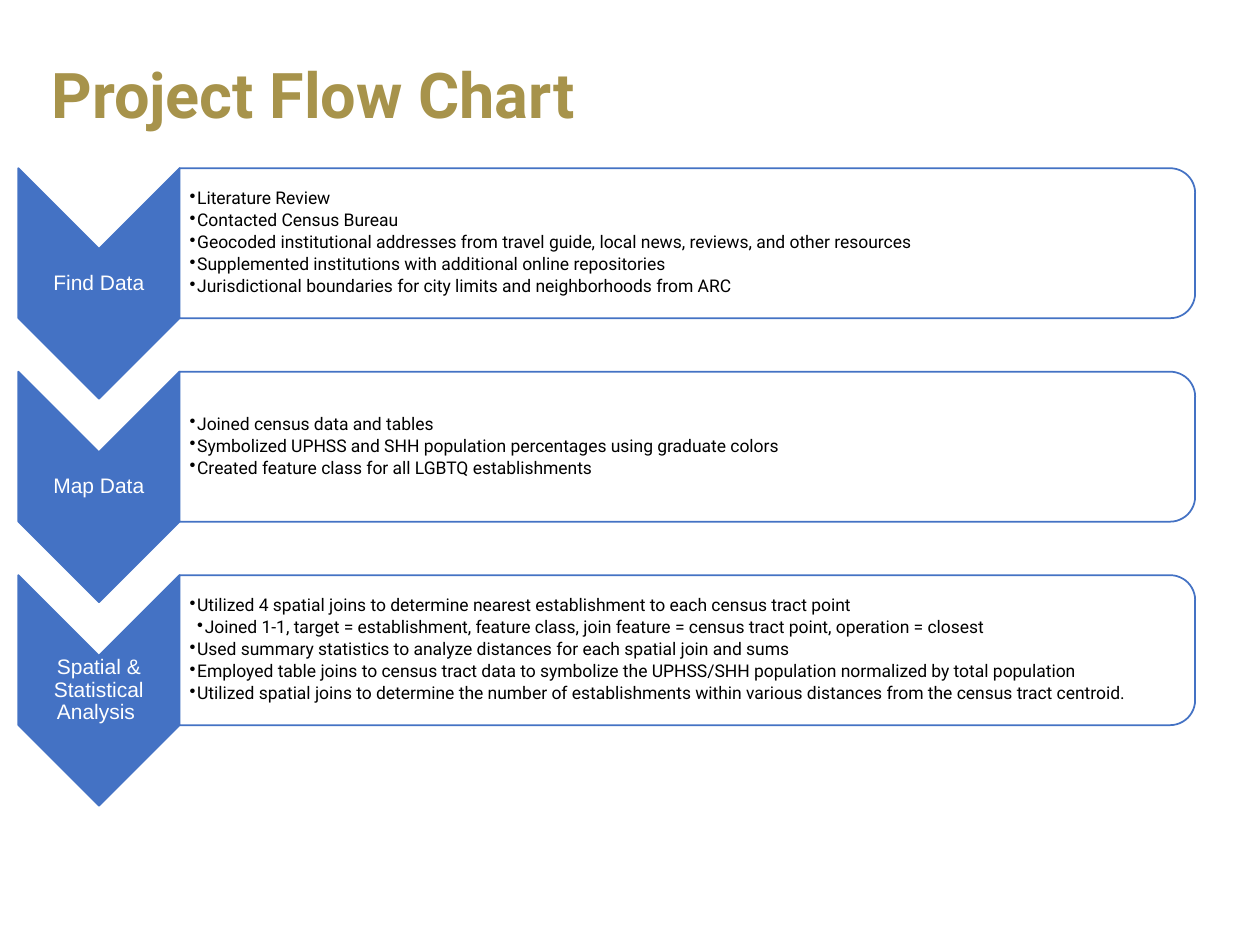
from lxml.etree import SubElement
from pptx import Presentation
from pptx.dml.color import RGBColor
from pptx.enum.shapes import MSO_SHAPE
from pptx.enum.text import MSO_ANCHOR, PP_ALIGN
from pptx.oxml.ns import qn
from pptx.util import Inches, Pt

COLORS = {"blue": "4472C4", "gold": "A7934B", "white": "FFFFFF", "black": "000000"}
FORMATS = {
    "title": {"name": "Roboto", "size": Pt(36), "bold": True},
    "label": {"name": "Arial", "size": Pt(12)},
    "bullet": {"name": "Roboto", "size": Pt(10)},
}
CELL = 0.1  # inches per grid column and row
COLUMNS, ROWS = 100, 75
INSET = 0.1  # columns
BULLET_INDENT = 0.6

LEFT, TOP, STEP = 1.45, 13.35, 16.15
ARROW_W, ARROW_H = 12.8, 18.3
PANEL_W, PANEL_H = 80.6, 11.9

# Each stage: label, then bullets as (level, text)
STAGES = [
    ("Find Data", [
        (0, "Literature Review"),
        (0, "Contacted Census Bureau"),
        (0, "Geocoded institutional addresses from travel guide, local news, reviews, and other resources"),
        (0, "Supplemented institutions with additional online repositories"),
        (0, "Jurisdictional boundaries for city limits and neighborhoods from ARC"),
    ]),
    ("Map Data", [
        (0, "Joined census data and tables"),
        (0, "Symbolized UPHSS and SHH population percentages using graduate colors"),
        (0, "Created feature class for all LGBTQ establishments"),
    ]),
    ("Spatial & Statistical Analysis ", [
        (0, "Utilized 4 spatial joins to determine nearest establishment to each census tract point"),
        (1, "Joined 1-1, target = establishment, feature class, join feature = census tract point, "
            "operation = closest"),
        (0, "Used summary statistics to analyze distances for each spatial join and sums"),
        (0, "Employed table joins to census tract data to symbolize the UPHSS/SHH population "
            "normalized by total population"),
        (0, "Utilized spatial joins to determine the number of establishments within various "
            "distances from the census tract centroid."),
    ]),
]


def grid(cells):
    return Inches(cells * CELL)


def rgb(color):
    return RGBColor.from_string(COLORS[color])


class FlowSlide:
    """Holds the current slide and draws styled elements on its grid."""

    def __init__(self, prs):
        self.s = prs.slides.add_slide(prs.slide_layouts[6])

    def turned(self, shape, x, y, w, h, fill, alpha=None):
        """Draw a shape turned by 90 degrees that covers the box x, y, w, h."""
        sp = self.s.shapes.add_shape(
            shape, grid(x + (w - h) / 2), grid(y + (h - w) / 2), grid(h), grid(w))
        sp.rotation = 90
        sp.shadow.inherit = False
        sp.fill.solid()
        sp.fill.fore_color.rgb = rgb(fill)
        if alpha:
            clr = sp.fill._xPr.find(".//" + qn("a:srgbClr"))
            SubElement(clr, qn("a:alpha"), val=str(alpha * 1000))
        sp.line.color.rgb = rgb("blue")
        sp.line.width = Pt(1)

    def text(self, x, y, w, h, paragraphs, style, color, align=PP_ALIGN.LEFT,
             after=0, bullets=False, insets=None):
        tf = self.s.shapes.add_textbox(grid(x), grid(y), grid(w), grid(h)).text_frame
        tf.word_wrap = True
        tf.vertical_anchor = MSO_ANCHOR.MIDDLE
        for side, size in (insets or {}).items():
            setattr(tf, f"margin_{side}", grid(size))
        for i, (level, text) in enumerate(paragraphs):
            p = tf.paragraphs[0] if i == 0 else tf.add_paragraph()
            if bullets:
                self.bullet(p, level)
            p.alignment = align
            p.line_spacing = 0.9
            p.space_after = Pt(after)
            r = p.add_run()
            r.text = text
            for name, value in FORMATS[style].items():
                setattr(r.font, name, value)
            r.font.color.rgb = rgb(color)

    def bullet(self, p, level):
        p.level = level
        pPr = p._p.get_or_add_pPr()
        pPr.set("marL", str(grid(BULLET_INDENT * (level + 1))))
        pPr.set("indent", str(-grid(BULLET_INDENT)))
        SubElement(pPr, qn("a:buChar"), char="•")

    def stage(self, y, label, bullets):
        insets = dict.fromkeys(("left", "top", "right", "bottom"), INSET)
        right = LEFT + ARROW_W
        self.turned(MSO_SHAPE.CHEVRON, LEFT, y, ARROW_W, ARROW_H, "blue")
        self.text(LEFT, y + ARROW_W / 2, ARROW_W, ARROW_H - ARROW_W, [(0, label)],
                  "label", "white", PP_ALIGN.CENTER, after=4.2, insets=insets)
        self.turned(MSO_SHAPE.ROUND_2_SAME_RECTANGLE, right, y, PANEL_W, PANEL_H,
                    "white", alpha=90)
        self.text(right, y + 0.6, PANEL_W - 0.5, PANEL_H - 1.2, bullets, "bullet", "black",
                  after=1.75, bullets=True, insets={**insets, "left": 0.8})


def main():
    prs = Presentation()
    prs.slide_width, prs.slide_height = grid(COLUMNS), grid(ROWS)
    slide = FlowSlide(prs)
    for i, (label, bullets) in enumerate(STAGES):
        slide.stage(TOP + i * STEP, label, bullets)
    slide.text(3.1, 2.2, 93.8, 11.1, [(0, "Project Flow Chart")], "title", "gold")
    prs.save("out.pptx")


if __name__ == "__main__":
    main()
